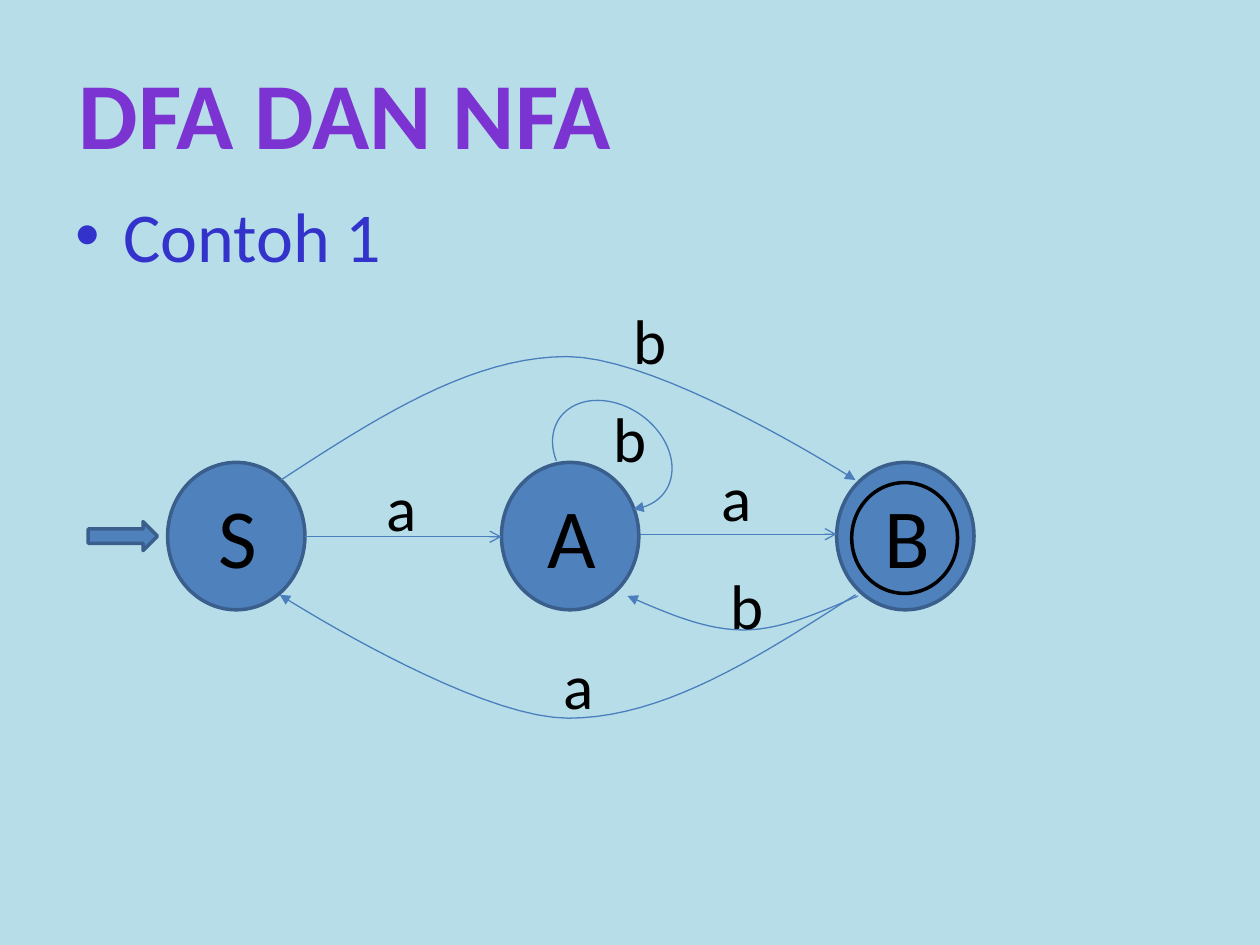
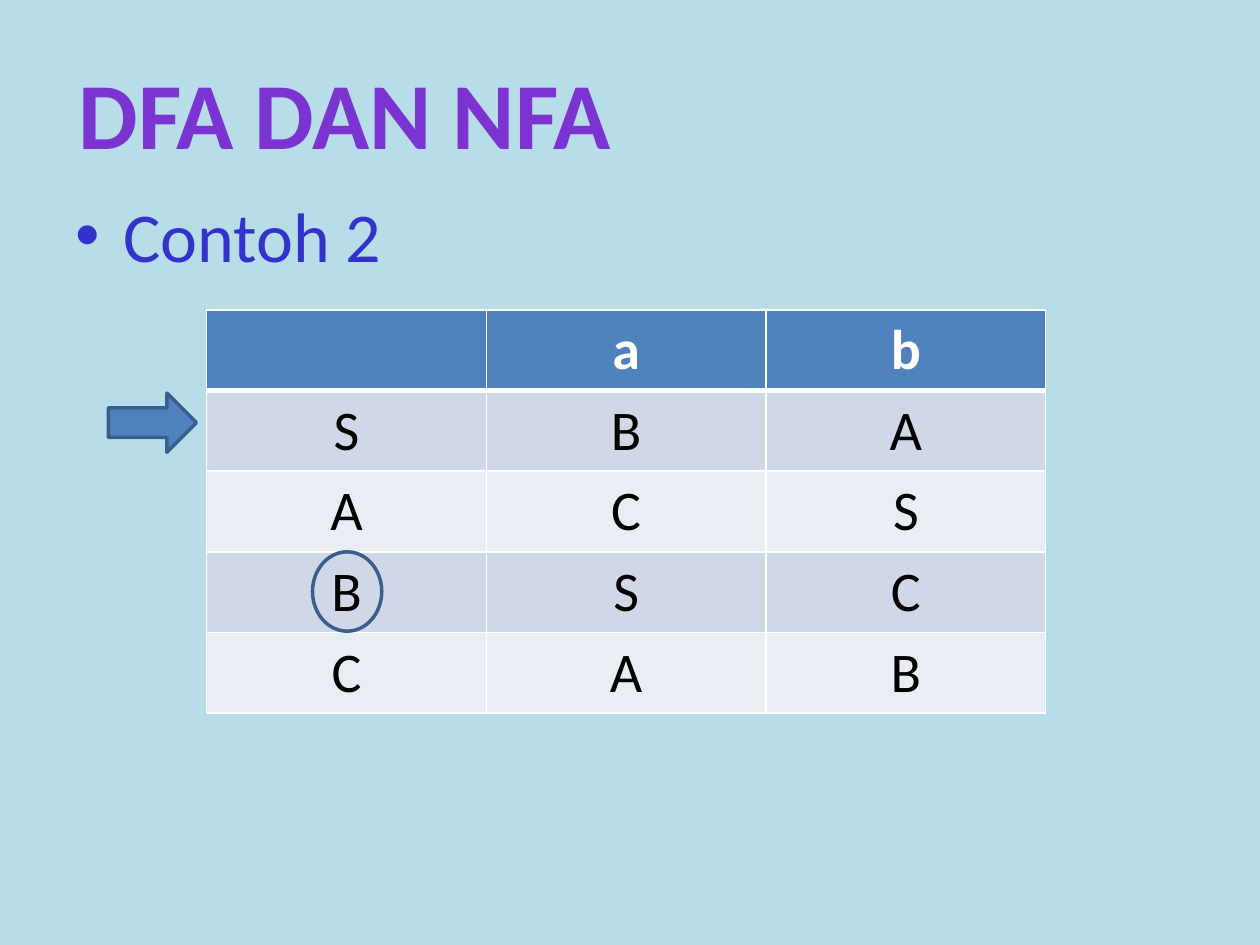
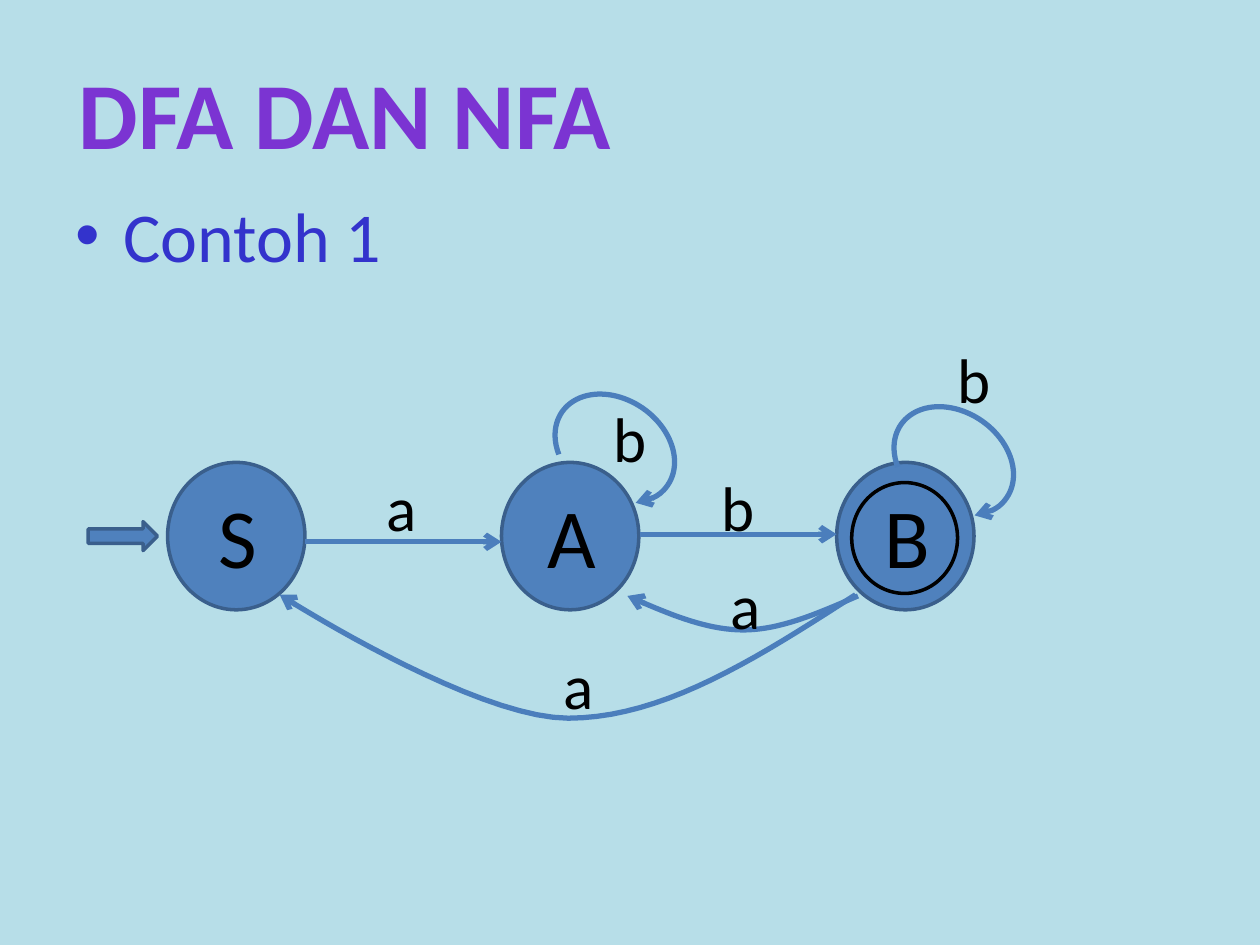
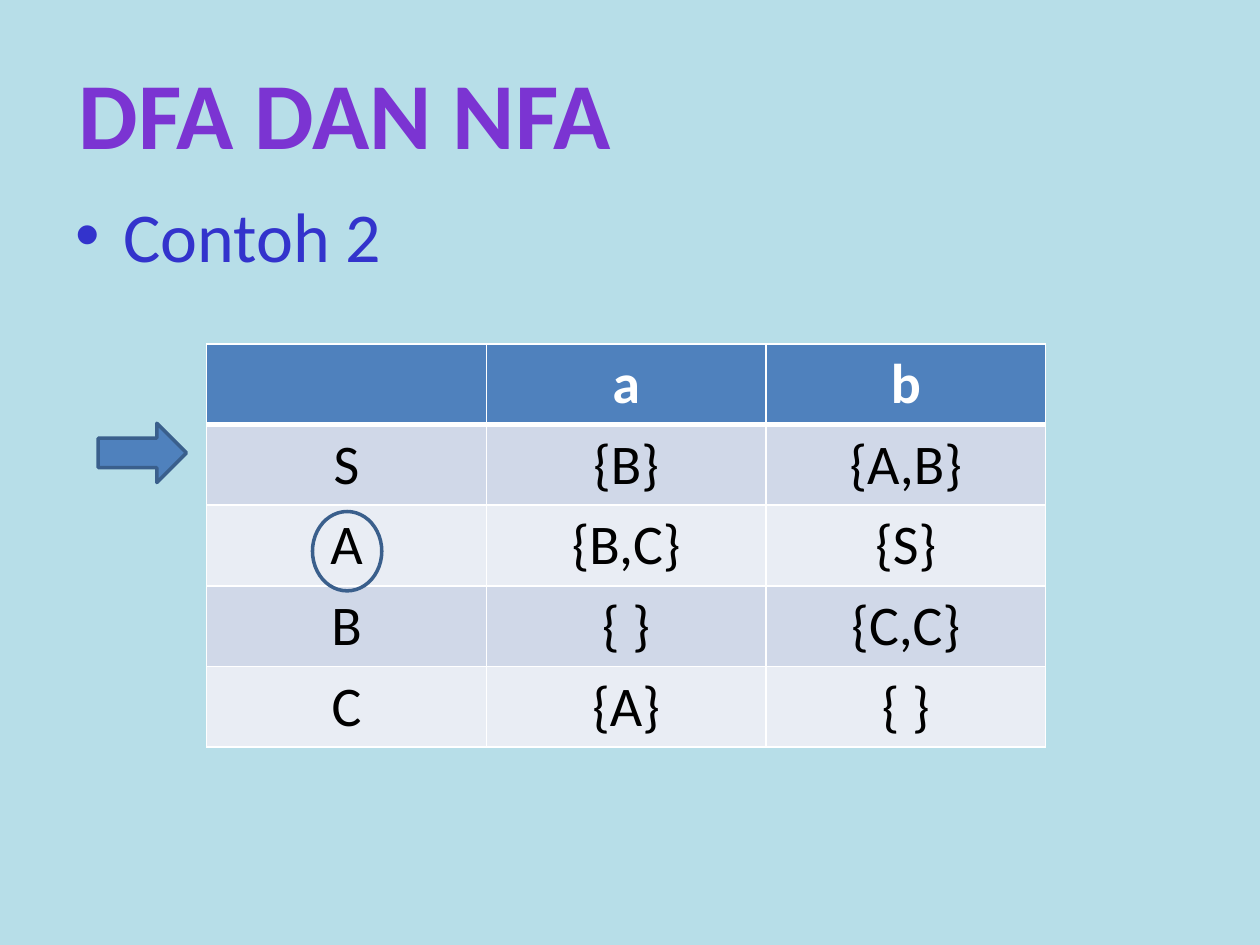
from dataclasses import dataclass

from lxml.etree import SubElement
from pptx import Presentation
from pptx.dml.color import RGBColor as RGB
from pptx.enum.shapes import MSO_CONNECTOR as Connector, MSO_SHAPE as Preset
from pptx.enum.text import MSO_ANCHOR as Anchor, MSO_AUTO_SIZE as AutoSize, PP_ALIGN as Align
from pptx.oxml.ns import qn
from pptx.util import Emu, Pt

PX = 9144  # 100 px to the inch


@dataclass(frozen=True)
class Theme:
    font: str = "Calibri"
    background: str = "B7DEE8"
    title: str = "7B34D2"
    heading: str = "3333CC"
    ink: str = "000000"
    white: str = "FFFFFF"
    accent: str = "4F81BD"
    outline: str = "3A5F8C"
    edge: str = "4B7EBC"
    bands: tuple = ("D0D8E8", "E9EDF4")
    title_size: int = 54
    heading_size: int = 40
    state_size: int = 48
    label_size: int = 36
    table_size: int = 32
    outline_width: int = 2


def px(*lengths):
    return [Emu(round(length * PX)) for length in lengths]


def apply(target, values):
    for name, value in values.items():
        setattr(target, name, value)


def bezier(start, segments, steps=20):
    """Points along a chain of cubic curves, start included."""
    points = [start]
    for control_1, control_2, end in segments:
        corners = (points[-1], control_1, control_2, end)
        for step in range(1, steps + 1):
            t = step / steps
            weights = ((1 - t) ** 3, 3 * t * (1 - t) ** 2, 3 * t * t * (1 - t), t ** 3)
            points.append(tuple(sum(w * corner[axis] for w, corner in zip(weights, corners))
                                for axis in (0, 1)))
    return points


class Deck:
    def __init__(self, theme):
        self.theme = theme
        self.presentation = Presentation()
        apply(self.presentation, dict(zip(("slide_width", "slide_height"), px(1000, 750))))
        fill = self.presentation.slide_master.background.fill
        fill.solid()
        fill.fore_color.rgb = RGB.from_string(theme.background)
        self.slide = None

    # Text
    def fill_text(self, frame, text, size, color, align=Align.LEFT, bold=False):
        paragraph = frame.paragraphs[0]
        paragraph.alignment = align
        if text:
            run = paragraph.add_run()
            run.text = text
            apply(run.font, {"name": self.theme.font, "size": Pt(size), "bold": bold})
            run.font.color.rgb = RGB.from_string(color)
        return paragraph

    def text(self, box, text, size, color, align=Align.LEFT, parent=None):
        shapes = (parent or self.slide).shapes
        frame = shapes.add_textbox(*px(*box)).text_frame
        frame.word_wrap = True
        return self.fill_text(frame, text, size, color, align)

    def label(self, left, top, text):
        self.text((left, top, 55, 71), text, self.theme.label_size, self.theme.ink)

    # Slide with its title and bulleted heading
    def add_slide(self, title, heading):
        theme = self.theme
        self.slide = self.presentation.slides.add_slide(self.presentation.slide_layouts[5])
        placeholder = self.slide.shapes.title
        apply(placeholder, dict(zip(("left", "top", "width", "height"), px(50, 39, 447, 101))))
        apply(placeholder.text_frame, {"word_wrap": False, "auto_size": AutoSize.NONE,
                                       "vertical_anchor": Anchor.TOP})
        self.fill_text(placeholder.text_frame, title, theme.title_size, theme.title,
                       Align.CENTER, bold=True)

        paragraph = self.text((50, 148, 900, 547), heading, theme.heading_size, theme.heading)
        properties = paragraph._p.get_or_add_pPr()
        indent = px(38)[0]
        properties.set("marL", str(indent))
        properties.set("indent", str(-indent))
        SubElement(properties, qn("a:buFont"), typeface="Arial")
        SubElement(properties, qn("a:buChar"), char="•")

    # Shapes and lines
    def stroke(self, line, color, width, head=None):
        line.color.rgb = RGB.from_string(color)
        line.width = Pt(width)
        if head:
            SubElement(line._get_or_add_ln(), qn("a:tailEnd"), type=head)

    def shape(self, preset, box, fill=None, color=None, parent=None):
        shape = (parent or self.slide).shapes.add_shape(preset, *px(*box))
        shape.shadow.inherit = False
        if fill:
            shape.fill.solid()
            shape.fill.fore_color.rgb = RGB.from_string(fill)
        else:
            shape.fill.background()
        self.stroke(shape.line, color or self.theme.outline, self.theme.outline_width)
        return shape

    def block_arrow(self, *box):
        self.shape(Preset.RIGHT_ARROW, box, self.theme.accent)

    def state(self, name, left, final=False):
        theme = self.theme
        group = self.slide.shapes.add_group_shape()
        self.shape(Preset.OVAL, (left, 367, 109, 117), theme.accent, parent=group)
        self.text((left + 17, 380, 78, 91), name, theme.state_size, theme.ink,
                  Align.CENTER, group)
        if final:
            self.shape(Preset.OVAL, (left + 12, 383, 84, 88), color=theme.ink, parent=group)

    def straight_edge(self, start, end, width):
        connector = self.slide.shapes.add_connector(Connector.STRAIGHT, *px(*start, *end))
        self.stroke(connector.line, self.theme.edge, width, "arrow")
        SubElement(connector._element.spPr, qn("a:effectLst"))

    def curved_edge(self, start, segments, width, head):
        points = [px(*point) for point in bezier(start, segments)]
        builder = self.slide.shapes.build_freeform(*points[0])
        builder.add_line_segments(points[1:], close=False)
        curve = builder.convert_to_shape()
        curve.shadow.inherit = False
        curve.fill.background()
        self.stroke(curve.line, self.theme.edge, width, head)

    def loop_edge(self, left, top, width, head):
        arc = self.shape(Preset.ARC, (left, top, 78, 102))
        arc.rotation = 304.8
        arc.adjustments[0], arc.adjustments[1] = 137.545, 74.462
        self.stroke(arc.line, self.theme.edge, width, head)

    # Transition table
    def border(self, cell, side, width):
        line = SubElement(cell._tc.get_or_add_tcPr(), qn("a:ln" + side), w=str(Pt(width)))
        SubElement(SubElement(line, qn("a:solidFill")), qn("a:srgbClr"), val=self.theme.white)

    def table(self, top, rows):
        theme = self.theme
        columns, row_height, column_width = len(rows[0]), 64, 222
        table = self.slide.shapes.add_table(
            len(rows), columns,
            *px(164, top, columns * column_width, len(rows) * row_height)).table
        for row_index, row in enumerate(rows):
            header = row_index == 0
            fill = theme.accent if header else theme.bands[(row_index - 1) % 2]
            for column_index, text in enumerate(row):
                cell = table.cell(row_index, column_index)
                for side in "LRTB":
                    thick = (row_index, side) in ((0, "B"), (1, "T"))
                    self.border(cell, side, 3 if thick else 1)
                cell.fill.solid()
                cell.fill.fore_color.rgb = RGB.from_string(fill)
                self.fill_text(cell.text_frame, text, theme.table_size,
                               theme.white if header else theme.ink, Align.CENTER, header)


TITLE = "DFA DAN NFA"
STATE_LEFT = {"A": 398, "S": 133, "B": 664}
S_TO_B = ((223, 381), [((298, 332), (374, 283), (450, 283)),
                       ((526, 283), (679, 381), (679, 381))])
B_TO_A = ((681, 473), [((651, 486), (620, 500), (590, 500)),
                       ((559, 500), (528, 486), (498, 473))])
B_TO_S = ((679, 472), [((603, 521), (527, 570), (451, 570)),
                       ((375, 570), (222, 472), (222, 472))])


def automaton_slide(deck, heading, curves, loops, labels, s_to_a_y, width, head):
    deck.add_slide(TITLE, heading)
    for name, left in STATE_LEFT.items():
        deck.state(name, left, final=name == "B")
    deck.straight_edge((242, s_to_a_y), (398, s_to_a_y), width)
    deck.straight_edge((508, 424), (664, 424), width)
    for start, segments in curves:
        deck.curved_edge(start, segments, width, head)
    for left, top in loops:
        deck.loop_edge(left, top, width, head)
    for left, top, text in labels:
        deck.label(left, top, text)
    deck.block_arrow(70, 414, 55, 23)


def table_slide(deck, heading, arrow_at, table_top, rows, ring_top):
    deck.add_slide(TITLE, heading)
    deck.block_arrow(*arrow_at, 70, 47)
    deck.table(table_top, rows)
    deck.shape(Preset.OVAL, (248, ring_top, 55, 63))  # final state


def main():
    deck = Deck(Theme())
    shared_labels = [(297, 367, "a"), (437, 508, "a"), (477, 312, "b")]

    # Deterministic automaton
    automaton_slide(deck, "Contoh 1", [S_TO_B, B_TO_A, B_TO_S], [(447, 310)],
                    shared_labels + [(570, 445, "b"), (563, 359, "a"), (493, 234, "b")],
                    s_to_a_y=426, width=0.75, head="triangle")
    table_slide(deck, "Contoh 2", (86, 312), 246,
                [("", "a", "b"), ("S", "B", "A"), ("A", "C", "S"),
                 ("B", "S", "C"), ("C", "A", "B")], ring_top=438)

    # Nondeterministic automaton
    automaton_slide(deck, "Contoh 1", [B_TO_A, B_TO_S], [(718, 315), (449, 305)],
                    shared_labels + [(570, 445, "a"), (563, 367, "b"), (750, 265, "b")],
                    s_to_a_y=430, width=3, head="arrow")
    table_slide(deck, "Contoh 2", (78, 336), 273,
                [("", "a", "b"), ("S", "{B}", "{A,B}"), ("A", "{B,C}", "{S}"),
                 ("B", "{ }", "{C,C}"), ("C", "{A}", "{ }")], ring_top=406)

    deck.presentation.save("out.pptx")


if __name__ == "__main__":
    main()
